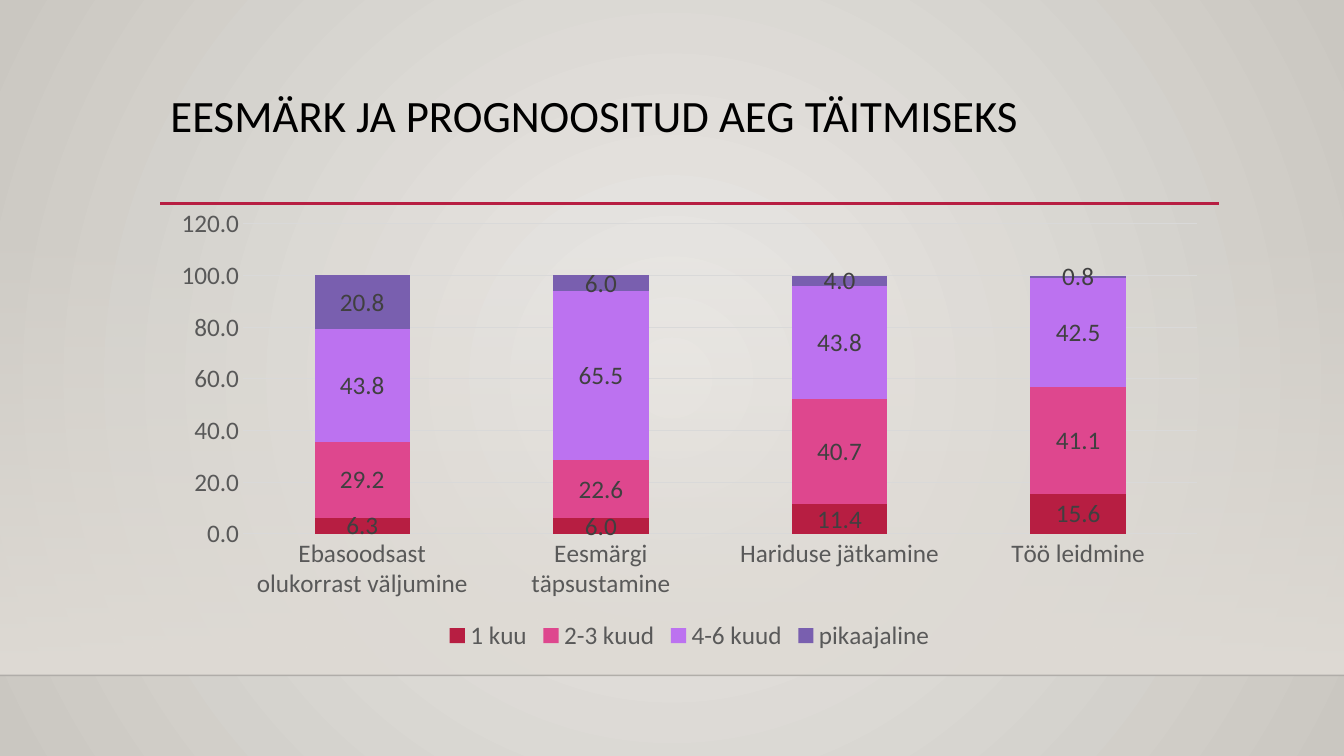
from lxml.etree import SubElement
from pptx import Presentation
from pptx.chart.data import CategoryChartData
from pptx.dml.color import RGBColor
from pptx.enum.chart import XL_CHART_TYPE, XL_LABEL_POSITION, XL_LEGEND_POSITION, XL_TICK_MARK
from pptx.enum.shapes import MSO_CONNECTOR, MSO_SHAPE
from pptx.enum.text import MSO_ANCHOR, MSO_AUTO_SIZE, PP_ALIGN
from pptx.oxml.ns import qn
from pptx.util import Cm, Pt

TITLE = "EESMÄRK JA PROGNOOSITUD AEG TÄITMISEKS"
GOALS = [
    "Ebasoodsast olukorrast väljumine",
    "Eesmärgi täpsustamine",
    "Hariduse jätkamine",
    "Töö leidmine",
]
TERMS = [
    ("1 kuu", "B71E42", (6.3, 6, 11.4, 15.6)),
    ("2-3 kuud", "DE478E", (29.2, 22.6, 40.7, 41.1)),
    ("4-6 kuud", "BC72F0", (43.8, 65.5, 43.8, 42.5)),
    ("pikaajaline", "795FAF", (20.8, 6, 4, 0.8)),
]
WIDE, HIGH = 33.87, 19.05
LEFT, SPAN = 4.04, 26.67
FLOOR = 17.02


def paint(part, tint):
    part.rgb = RGBColor.from_string(tint)


def style(font, size=18, tint="595959"):
    font.name = "Calibri"
    font.size = Pt(size)
    paint(font.color, tint)


def write(frame, text, size, tint, align=PP_ALIGN.LEFT, anchor=MSO_ANCHOR.TOP, space=0.9):
    frame.word_wrap = True
    frame.auto_size = MSO_AUTO_SIZE.NONE
    frame.vertical_anchor = anchor
    para = frame.paragraphs[0]
    para.alignment = align
    para.line_spacing = space
    run = para.add_run()
    run.text = text
    style(run.font, size, tint)


def blend(fill, *tints):
    fill.gradient()
    for stop, tint in zip(fill.gradient_stops, tints):
        paint(stop.color, tint)


def fade(root, share):
    tone = root.find(".//" + qn("a:srgbClr"))
    SubElement(tone, qn("a:alpha"), val=str(share * 1000))


def rule(slide, left, top, width, tint, weight):
    line = slide.shapes.add_connector(
        MSO_CONNECTOR.STRAIGHT, Cm(left), Cm(top), Cm(left + width), Cm(top))
    paint(line.line.color, tint)
    line.line.width = Pt(weight)
    SubElement(line.element.spPr, qn("a:effectLst"))
    return line


def stage(slide):
    blend(slide.background.fill, "ECEAE7", "CAC7C1")
    grad = slide.element.find(".//" + qn("a:gradFill"))
    grad.remove(grad.find(qn("a:lin")))
    ring = SubElement(grad, qn("a:path"), path="circle")
    SubElement(ring, qn("a:fillToRect"), dict.fromkeys("ltrb", "50000"))

    top = 5.61
    wall = slide.shapes.add_shape(
        MSO_SHAPE.RECTANGLE, 0, Cm(top), Cm(WIDE), Cm(FLOOR - top))
    wall.shadow.inherit = False
    wall.line.fill.background()
    blend(wall.fill, "DFDBD5", "DFDBD5")
    wall.fill.gradient_angle = 270
    fade(wall.element.spPr, 0)

    edge = rule(slide, 0, FLOOR, WIDE, "000001", 1)
    fade(edge.element.spPr, 20)
    rule(slide, LEFT, 5.13, SPAN, "B71E42", 2.5)


def plot(slide):
    data = CategoryChartData(number_format="0.0")
    data.categories = GOALS
    for name, tint, vals in TERMS:
        data.add_series(name, vals)
    chart = slide.shapes.add_chart(
        XL_CHART_TYPE.COLUMN_STACKED, Cm(LEFT), Cm(5.03), Cm(SPAN), Cm(11.5), data).chart
    chart.has_title = False
    style(chart.font, tint="000000")

    bars = chart.plots[0]
    bars.gap_width = 150
    bars.overlap = 100
    bars.vary_by_categories = False
    for term, (name, tint, vals) in zip(bars.series, TERMS):
        term.format.fill.solid()
        paint(term.format.fill.fore_color, tint)
        tags = term.data_labels
        tags.show_value = True
        tags.position = XL_LABEL_POSITION.CENTER
        tags.number_format = "0.0"
        tags.number_format_is_linked = False
        style(tags.font, tint="404040")

    base, scale = chart.category_axis, chart.value_axis
    for axis in (base, scale):
        axis.major_tick_mark = axis.minor_tick_mark = XL_TICK_MARK.NONE
        style(axis.tick_labels.font)
    scale.minimum_scale, scale.maximum_scale, scale.major_unit = 0, 120, 20
    scale.tick_labels.number_format = "0.0"
    scale.tick_labels.number_format_is_linked = False
    scale.format.line.fill.background()
    for line in (base.format.line, scale.major_gridlines.format.line):
        paint(line.color, "D9D9D9")
        line.width = Pt(0.75)

    chart.has_legend = True
    chart.legend.position = XL_LEGEND_POSITION.BOTTOM
    chart.legend.include_in_layout = False
    style(chart.legend.font)


def main():
    deck = Presentation()
    deck.slide_width, deck.slide_height = Cm(WIDE), Cm(HIGH)
    slide = deck.slides.add_slide(deck.slide_layouts[5])
    stage(slide)
    head = slide.shapes.title
    head.left, head.top, head.width, head.height = Cm(LEFT), Cm(2.24), Cm(SPAN), Cm(2.92)
    write(head.text_frame, TITLE, 32, "000000")
    plot(slide)
    deck.save("out.pptx")


if __name__ == "__main__":
    main()
